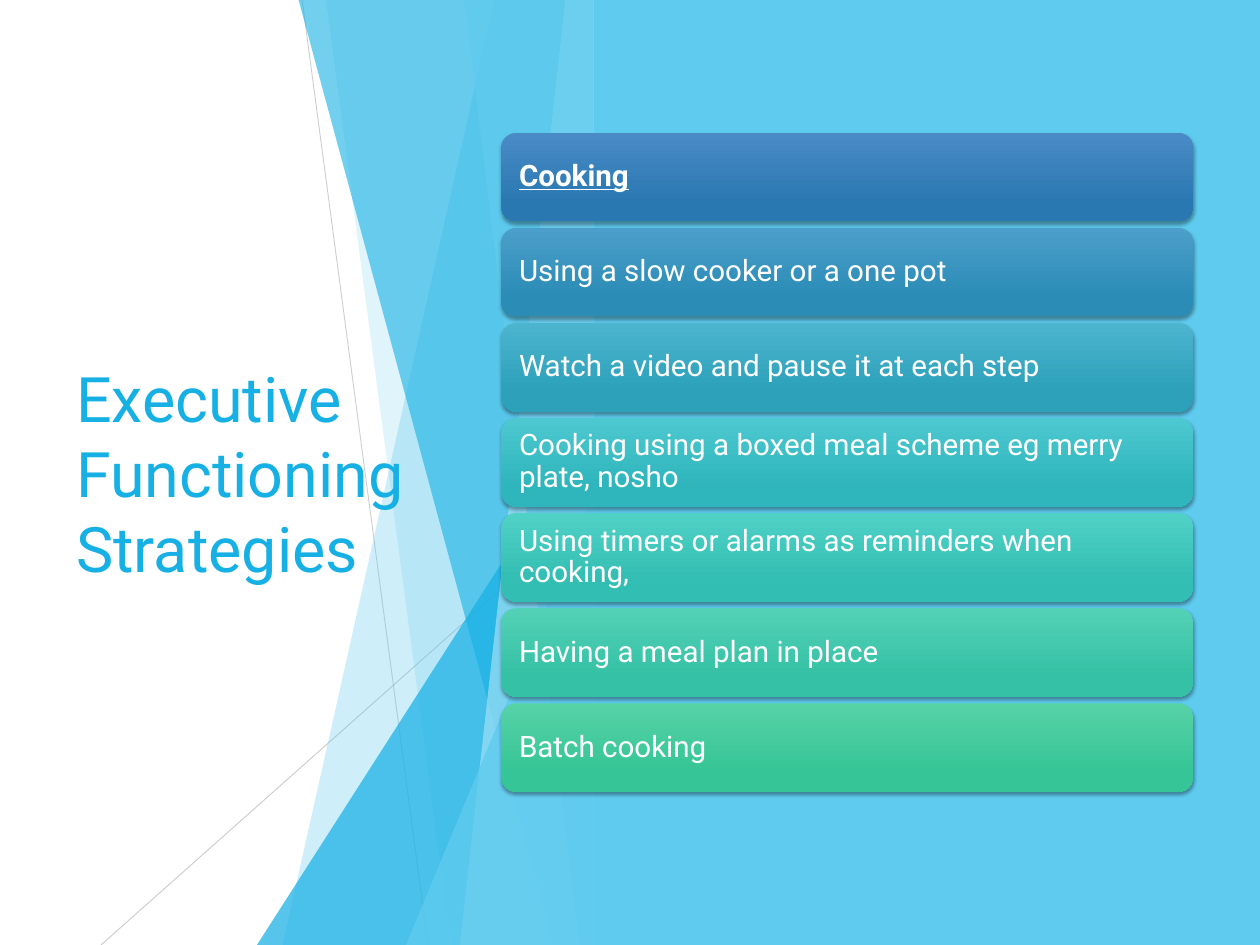
"""Build the cooking slide of the executive functioning strategies deck."""
import lxml.etree
import pptx
import pptx.dml.color
import pptx.enum.shapes
import pptx.enum.text
import pptx.oxml.ns
import pptx.util

qn = pptx.oxml.ns.qn
SHAPES = pptx.enum.shapes.MSO_SHAPE


def color(hex_string):
    return pptx.dml.color.RGBColor.from_string(hex_string)


def write(shape, text, size, hex_string, inset=0.1, spacing=1.0, bold=False, underline=False):
    frame = shape.text_frame
    frame.word_wrap = True
    frame.auto_size = pptx.enum.text.MSO_AUTO_SIZE.NONE
    frame.vertical_anchor = pptx.enum.text.MSO_ANCHOR.MIDDLE
    frame.margin_left = frame.margin_right = pptx.util.Inches(inset)
    frame.margin_top = frame.margin_bottom = pptx.util.Inches(inset)
    paragraph = frame.paragraphs[0]
    paragraph.alignment = pptx.enum.text.PP_ALIGN.LEFT
    paragraph.line_spacing = spacing
    run = paragraph.add_run()
    run.text = text
    run.font.name = "Roboto"
    run.font.size = pptx.util.Pt(size)
    run.font.bold = bold
    run.font.underline = underline
    run.font.color.rgb = color(hex_string)


presentation = pptx.Presentation()
presentation.slide_width = pptx.util.Inches(14.22)
presentation.slide_height = pptx.util.Inches(10.67)
slide = presentation.slides.add_slide(presentation.slide_layouts[5])
shapes = slide.shapes

column = presentation.slide_width / 100
row = presentation.slide_height / 100
panel_left = 47.1
translucent = []

rays = [
    (23.98, 0, 33.97, 100, 75),
    (panel_left, 53.7, 8.02, 100, 80),
]
for start_x, start_y, end_x, end_y, opacity in rays:
    ray = shapes.add_connector(
        pptx.enum.shapes.MSO_CONNECTOR.STRAIGHT,
        int(start_x * column), int(start_y * row), int(end_x * column), int(end_y * row),
    )
    ray.line.color.rgb = color("BFBFBF")
    ray.line.width = pptx.util.Pt(0.75)
    lxml.etree.SubElement(ray.element.spPr, qn("a:effectLst"))
    translucent.append((ray, opacity))

facets = [
    (39.24, 22.43, 0, "5FCBEF", 30),
    (25.88, 35.79, 0, "5FCBEF", 20),
    (None, 20.39, 44.42, "17B0E4", 72),
    (23.7, 43.95, 0, "17B0E4", 60),
    (44.87, 36.5, 0, "9FE0F5", 70),
    (36.85, 45.99, 0, "5FCBEF", 65),
    (None, 32.21, 52.3, "5FCBEF", 80),
]
for top_left, bottom_left, top, hex_string, opacity in facets:
    if top_left is None:
        facet = shapes.add_shape(
            SHAPES.ISOSCELES_TRIANGLE, int(bottom_left * column), int(top * row),
            int((panel_left - bottom_left) * column), int((100 - top) * row),
        )
        facet.adjustments[0] = 1
    else:
        builder = shapes.build_freeform(int(top_left * column), int(top * row))
        corners = [(panel_left, top), (panel_left, 100), (bottom_left, 100)]
        builder.add_line_segments([(int(x * column), int(y * row)) for x, y in corners])
        facet = builder.convert_to_shape()
    facet.shadow.inherit = False
    facet.fill.solid()
    facet.fill.fore_color.rgb = color(hex_string)
    facet.line.fill.background()
    translucent.append((facet, opacity))

for shape, opacity in translucent:
    for rgb_element in shape.element.iter(qn("a:srgbClr")):
        lxml.etree.SubElement(rgb_element, qn("a:alpha"), val=str(opacity * 1000))

title = shapes.title
title.left, title.top = int(5.34 * column), int(20.15 * row)
title.width, title.height = int(29.11 * column), int(59.7 * row)
write(title, "Executive Functioning Strategies", 51, "17B0E4")
shapes.element.append(title.element)

panel = shapes.add_shape(
    SHAPES.RECTANGLE, int(panel_left * column), 0,
    int((100 - panel_left) * column), presentation.slide_height,
)
panel.shadow.inherit = False
panel.fill.solid()
panel.fill.fore_color.rgb = color("5FCBEF")
panel.line.fill.background()

strategies = [
    ("Cooking", "4A8BC6", "2A78B2"),
    ("Using a slow cooker or a one pot", "4B9FCA", "2B8CB6"),
    ("Watch a video and pause it at each step", "4CB4CE", "2DA1BA"),
    ("Cooking using a boxed meal scheme eg merry plate, nosho", "4DC8D0", "2FB5BC"),
    ("Using timers or alarms as reminders when cooking,", "50D1C6", "33BEB3"),
    ("Having a meal plan in place", "53D1B6", "35C1A5"),
    ("Batch cooking", "56D2A7", "36C596"),
]
for index, (text, upper_color, lower_color) in enumerate(strategies):
    band = shapes.add_shape(
        SHAPES.ROUNDED_RECTANGLE, int(39.8 * column), int((14.06 + 10.06 * index) * row),
        int(54.92 * column), int(9.37 * row),
    )
    band.line.fill.background()
    band.fill.gradient()
    band.fill.gradient_angle = 270
    stops = zip(band.fill.gradient_stops, (0, 0.78), (upper_color, lower_color))
    for stop, position, hex_string in stops:
        stop.position = position
        stop.color.rgb = color(hex_string)
    band.shadow.inherit = False
    shadow = lxml.etree.SubElement(
        band.element.spPr.find(qn("a:effectLst")), qn("a:outerShdw"),
        blurRad=str(pptx.util.Pt(3)), dist=str(pptx.util.Pt(2)), dir="5400000", rotWithShape="0",
    )
    shadow_color = lxml.etree.SubElement(shadow, qn("a:srgbClr"), val="000000")
    lxml.etree.SubElement(shadow_color, qn("a:alpha"), val="35000")
    heading = index == 0
    write(band, text, 24, "FFFFFF", inset=0.15, spacing=0.9, bold=heading, underline=heading)

presentation.save("out.pptx")
